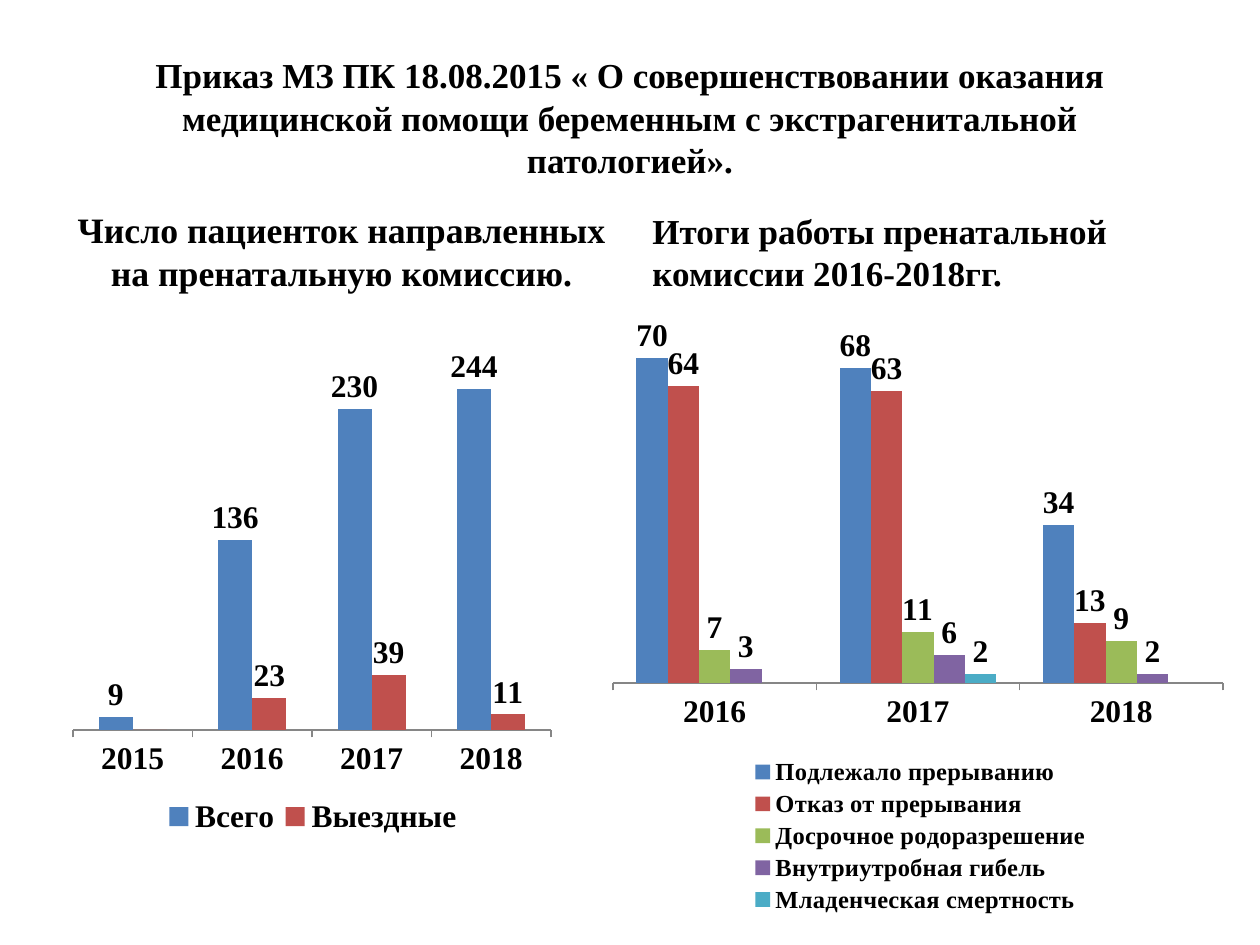
from dataclasses import dataclass
from typing import NamedTuple, Optional

from lxml.etree import SubElement
from pptx import Presentation
from pptx.chart.chart import Chart
from pptx.chart.data import CategoryChartData
from pptx.dml.color import RGBColor
from pptx.enum.chart import XL_CHART_TYPE as ChartType
from pptx.enum.chart import XL_LABEL_POSITION as LabelPos
from pptx.enum.chart import XL_LEGEND_POSITION as LegendPos
from pptx.enum.chart import XL_TICK_MARK as Tick
from pptx.enum.text import MSO_ANCHOR as Anchor
from pptx.enum.text import PP_ALIGN as Align
from pptx.oxml.ns import qn
from pptx.slide import Slide
from pptx.util import Emu, Pt

PX_PER_INCH = 126


def px(n: int) -> Emu:
    return Emu(round(n * 914400 / PX_PER_INCH))


@dataclass(frozen=True)
class Theme:
    font: str = "Times New Roman"
    ink: RGBColor = RGBColor(0, 0, 0)
    axis: RGBColor = RGBColor(0x86, 0x86, 0x86)
    series: tuple = ("4F81BD", "C0504D", "9BBB59", "8064A2", "4BACC6")
    title: float = 20
    wide_heading: float = 20.4
    chart: float = 18
    small_legend: float = 14


THEME = Theme()


class Box(NamedTuple):
    x: int
    y: int
    w: int
    h: int

    def emu(self) -> list[Emu]:
        return [px(n) for n in self]


@dataclass(frozen=True)
class Heading:
    box: Box
    text: str
    size: float
    align: Align
    anchor: Anchor


@dataclass(frozen=True)
class Columns:
    box: Box
    plot: Box
    legend: Box
    legend_size: float
    top: int
    years: tuple[str, ...]
    series: dict[str, tuple[Optional[int], ...]]


HEADINGS = [
    Heading(Box(63, 38, 1134, 158),
            "Приказ МЗ ПК 18.08.2015 « О совершенствовании оказания "
            "медицинской помощи беременным с экстрагенитальной патологией».",
            THEME.title, Align.CENTER, Anchor.MIDDLE),
    Heading(Box(63, 195, 557, 105),
            "Число пациенток направленных на пренатальную комиссию.",
            THEME.wide_heading, Align.CENTER, Anchor.BOTTOM),
    Heading(Box(640, 212, 557, 88),
            "Итоги работы пренатальной комиссии 2016-2018гг.",
            THEME.title, Align.LEFT, Anchor.BOTTOM),
]

CHARTS = [
    Columns(Box(63, 300, 498, 544), Box(73, 311, 478, 419), Box(158, 800, 310, 42),
            THEME.chart, 300, ("2015", "2016", "2017", "2018"),
            {"Всего": (9, 136, 230, 244), "Выездные": (0, 23, 39, 11)}),
    Columns(Box(600, 300, 635, 620), Box(613, 312, 610, 371), Box(748, 754, 345, 164),
            THEME.small_legend, 80, ("2016", "2017", "2018"),
            {"Подлежало прерыванию": (70, 68, 34),
             "Отказ от прерывания": (64, 63, 13),
             "Досрочное родоразрешение": (7, 11, 9),
             "Внутриутробная гибель": (3, 6, 2),
             "Младенческая смертность": (None, 2, None)}),
]


def style(font, size: float) -> None:
    font.name, font.size, font.bold = THEME.font, Pt(size), True
    font.color.rgb = THEME.ink


def add_heading(s: Slide, h: Heading) -> None:
    tf = s.shapes.add_textbox(*h.box.emu()).text_frame
    tf.word_wrap = True
    tf.vertical_anchor = h.anchor
    p = tf.paragraphs[0]
    p.text, p.alignment = h.text, h.align
    style(p.font, h.size)


def place(parent, part: Box, frame: Box, inner: bool = False) -> None:
    """Fix a chart part at a place given as fractions of the chart frame."""
    for old in parent.findall(qn("c:layout")):
        parent.remove(old)
    layout = SubElement(parent, qn("c:layout"))
    before = parent.find(qn("c:legendPos"))
    parent.insert(0 if before is None else 1, layout)
    manual = SubElement(layout, qn("c:manualLayout"))
    values = {"layoutTarget": "inner"} if inner else {}
    values |= {"xMode": "edge", "yMode": "edge",
               "x": (part.x - frame.x) / frame.w, "y": (part.y - frame.y) / frame.h,
               "w": part.w / frame.w, "h": part.h / frame.h}
    for name, value in values.items():
        SubElement(manual, qn(f"c:{name}")).set("val", str(value))


def hide_label(labels, idx: int) -> None:
    label = SubElement(labels, qn("c:dLbl"))
    SubElement(label, qn("c:idx")).set("val", str(idx))
    SubElement(label, qn("c:delete")).set("val", "1")
    labels.insert(0, label)


def style_axes(chart: Chart, top: int) -> None:
    val, cat = chart.value_axis, chart.category_axis
    val.visible = val.has_major_gridlines = False
    val.minimum_scale, val.maximum_scale = 0, top
    cat.major_tick_mark = Tick.OUTSIDE
    cat.format.line.color.rgb = THEME.axis
    style(cat.tick_labels.font, THEME.chart)


def add_columns(s: Slide, c: Columns) -> None:
    data = CategoryChartData()
    data.categories = c.years
    for name, values in c.series.items():
        data.add_series(name, values)
    chart = s.shapes.add_chart(ChartType.COLUMN_CLUSTERED, *c.box.emu(), data).chart
    chart.has_title = False
    style(chart.font, THEME.chart)
    style_axes(chart, c.top)

    # Columns and their values
    plot = chart.plots[0]
    plot.gap_width, plot.overlap, plot.vary_by_categories = 150, 0, False
    for ser, color in zip(plot.series, THEME.series):
        ser.format.fill.solid()
        ser.format.fill.fore_color.rgb = RGBColor.from_string(color)
        labels = ser.data_labels
        labels.show_value, labels.position = True, LabelPos.OUTSIDE_END
        style(labels.font, THEME.chart)
        for idx, value in enumerate(ser.values):
            if value == 0:
                hide_label(labels._element, idx)

    # Legend and layout
    chart.has_legend = True
    legend = chart.legend
    legend.position, legend.include_in_layout = LegendPos.BOTTOM, False
    style(legend.font, c.legend_size)
    place(legend._element, c.legend, c.box)
    place(chart._chartSpace.chart.plotArea, c.plot, c.box, inner=True)


def main() -> None:
    prs = Presentation()
    prs.slide_width, prs.slide_height = px(1260), px(945)
    s = prs.slides.add_slide(prs.slide_layouts[6])
    for heading in HEADINGS:
        add_heading(s, heading)
    for columns in CHARTS:
        add_columns(s, columns)
    prs.save("out.pptx")


if __name__ == "__main__":
    main()
